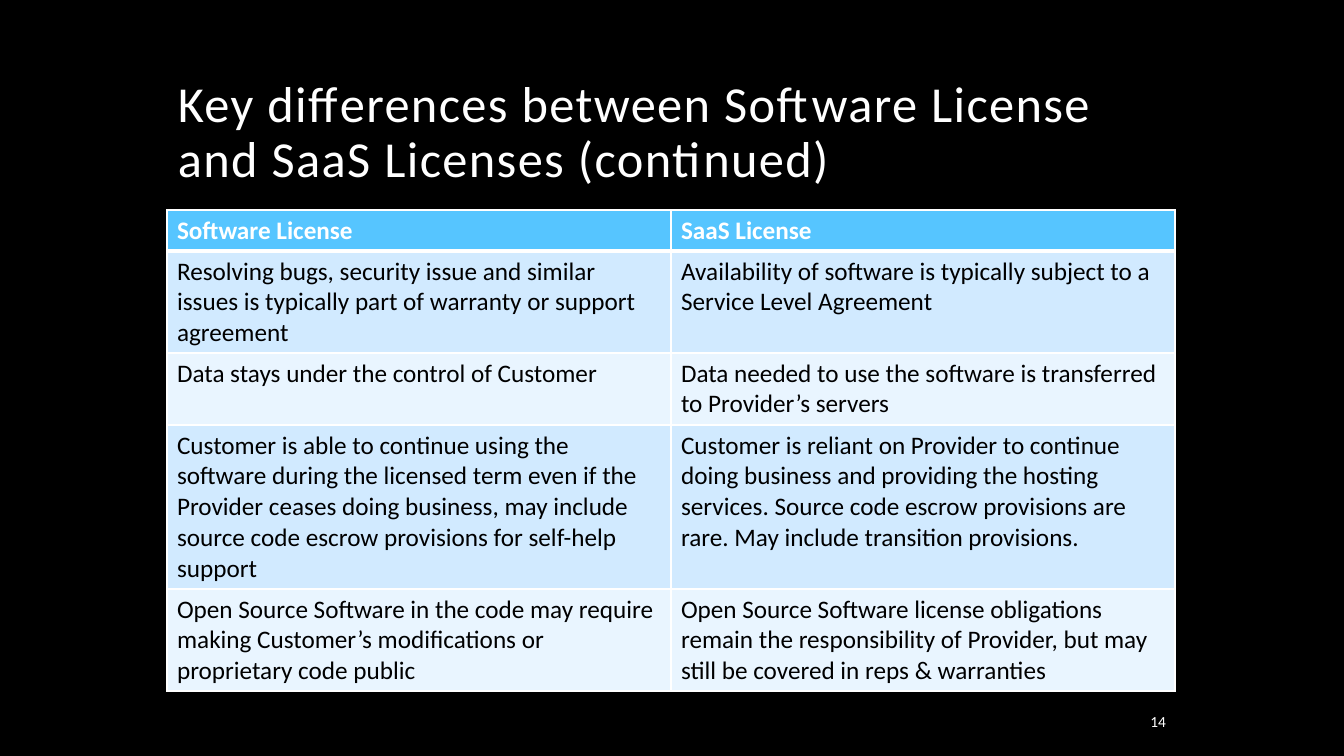
from pptx import Presentation
from pptx.dml.color import RGBColor
from pptx.enum.text import MSO_ANCHOR as Anchor, PP_ALIGN as Align
from pptx.oxml import parse_xml
from pptx.oxml.ns import nsdecls
from pptx.util import Pt

EMU_PER_PX = 12192000 / 1344
SLIDE_WIDTH, SLIDE_HEIGHT = 1344, 756

BLACK = RGBColor(0x00, 0x00, 0x00)
WHITE = RGBColor(0xFF, 0xFF, 0xFF)
HEADER_BLUE = RGBColor(0x56, 0xC5, 0xFF)
BAND_BLUE = RGBColor(0xD1, 0xEA, 0xFF)
PALE_BLUE = RGBColor(0xE9, 0xF5, 0xFF)

TITLE = "Key differences between Software License and SaaS Licenses (continued)"
DIFFERENCES = [
    ("Software License", "SaaS License"),
    ("Resolving bugs, security issue and similar issues is typically part of "
     "warranty or support agreement",
     "Availability of software is typically subject to a Service Level Agreement"),
    ("Data stays under the control of Customer",
     "Data needed to use the software is transferred to Provider’s servers"),
    ("Customer is able to continue using the software during the licensed term "
     "even if the Provider ceases doing business, may include source code escrow "
     "provisions for self-help support",
     "Customer is reliant on Provider to continue doing business and providing the "
     "hosting services. Source code escrow provisions are rare. May include "
     "transition provisions."),
    ("Open Source Software in the code may require making Customer’s modifications "
     "or proprietary code public",
     "Open Source Software license obligations remain the responsibility of "
     "Provider, but may still be covered in reps & warranties"),
]
ROW_HEIGHTS = [41, 102, 72, 164, 102]


def px(length):
    return round(length * EMU_PER_PX)


class LicenseSlide:
    """Holds the style and the slide being built."""

    font_name = "Calibri"

    def __init__(self, deck):
        self.slide = deck.slides.add_slide(deck.slide_layouts[6])
        background = self.slide.background.fill
        background.solid()
        background.fore_color.rgb = BLACK

    def style(self, paragraph, size, color, bold=False):
        font = paragraph.font
        font.name, font.size, font.bold = self.font_name, Pt(size), bold
        font.color.rgb = color

    def text(self, wording, box, size, anchor, align=Align.LEFT,
             line_spacing=1.0, tracking=0):
        frame = self.slide.shapes.add_textbox(*map(px, box)).text_frame
        frame.word_wrap = True
        frame.vertical_anchor = anchor
        paragraph = frame.paragraphs[0]
        paragraph.alignment = align
        paragraph.line_spacing = line_spacing
        run = paragraph.add_run()
        run.text = wording
        self.style(paragraph, size, WHITE)
        if tracking:
            run._r.get_or_add_rPr().set("spc", str(tracking * 100))

    def border(self, cell, side, width):
        cell._tc.get_or_add_tcPr().append(parse_xml(
            f'<a:ln{side} {nsdecls("a")} w="{Pt(width)}"><a:solidFill>'
            f'<a:srgbClr val="{WHITE}"/></a:solidFill></a:ln{side}>'))

    def table(self, rows, left, top, column_width, row_heights):
        columns = len(rows[0])
        grid = self.slide.shapes.add_table(
            len(rows), columns, px(left), px(top),
            px(column_width * columns), px(sum(row_heights))).table
        grid.horz_banding = False
        for column in grid.columns:
            column.width = px(column_width)
        for index, (wordings, height) in enumerate(zip(rows, row_heights)):
            grid.rows[index].height = px(height)
            header = index == 0
            fill = HEADER_BLUE if header else BAND_BLUE if index % 2 else PALE_BLUE
            for position, wording in enumerate(wordings):
                cell = grid.cell(index, position)
                cell.text = wording
                self.style(cell.text_frame.paragraphs[0], 18,
                           WHITE if header else BLACK, bold=header)
                # The rule under the header is heavier than the rest
                for side, width in (("L", 1), ("R", 1),
                                    ("T", 3 if index == 1 else 1),
                                    ("B", 3 if header else 1)):
                    self.border(cell, side, width)
                cell.fill.solid()
                cell.fill.fore_color.rgb = fill


def main():
    deck = Presentation()
    deck.slide_width, deck.slide_height = px(SLIDE_WIDTH), px(SLIDE_HEIGHT)
    page = LicenseSlide(deck)

    # Title
    page.text(TITLE, (168, 42, 1008, 151), 36, Anchor.BOTTOM,
              line_spacing=0.9, tracking=1)
    # Comparison of the two license types
    page.table(DIFFERENCES, 167, 210, 504, ROW_HEIGHTS)
    # Page number
    page.text("14", (1084, 706, 92, 30), 11, Anchor.MIDDLE, Align.RIGHT)

    deck.save("out.pptx")


if __name__ == "__main__":
    main()
